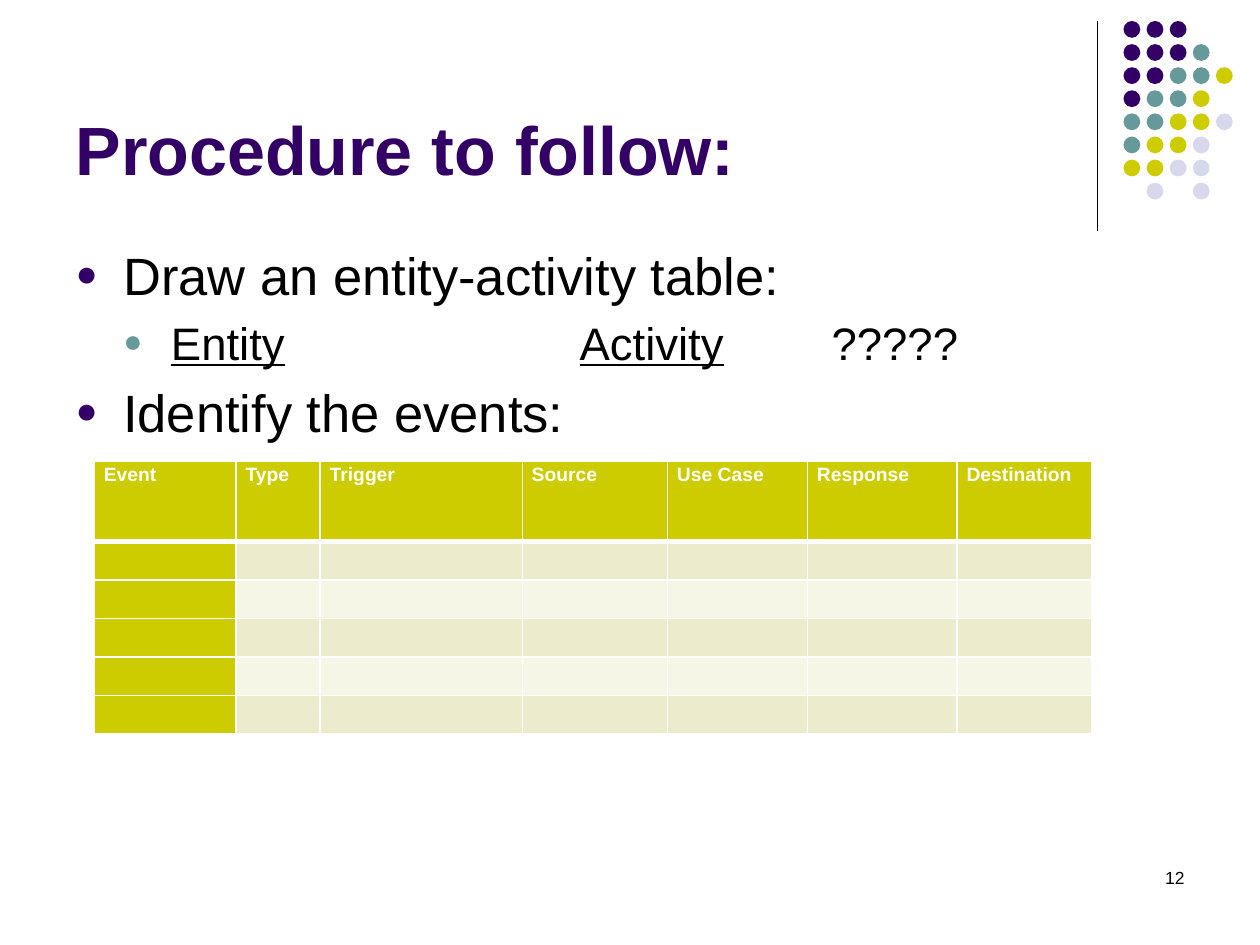
from pptx import Presentation
from pptx.dml.color import RGBColor
from pptx.enum.shapes import MSO_CONNECTOR as Link, MSO_SHAPE as Kind
from pptx.enum.text import MSO_ANCHOR as Anchor, MSO_AUTO_SIZE as Auto, PP_ALIGN as Align
from pptx.oxml.ns import qn
from pptx.util import Pt
from lxml.etree import SubElement as Sub

PLUM, TEAL, LIME, MIST = "330066", "669999", "CCCC00", "D8D8EC"
BLACK, WHITE = "000000", "FFFFFF"
BANDS = ("ECECCC", "F6F6E7")


def color(code):
    return RGBColor.from_string(code)


class Deck:
    face = "Arial"

    def __init__(self):
        self.prs = Presentation()
        self.prs.slide_width, self.prs.slide_height = Pt(720), Pt(540)
        self.slide = self.prs.slides.add_slide(self.prs.slide_layouts[1])
        self.shapes = self.slide.shapes

    def style(self, par, size, ink=BLACK, bold=False):
        font = par.font
        font.name, font.size, font.bold = self.face, Pt(size), bold
        font.color.rgb = color(ink)

    def place(self, shape, x, y, w, h):
        shape.left, shape.top, shape.width, shape.height = map(Pt, (x, y, w, h))
        frame = shape.text_frame
        frame.auto_size, frame.word_wrap = Auto.NONE, True
        return frame

    def title(self, text, *box):
        frame = self.place(self.shapes.title, *box)
        frame.text, frame.vertical_anchor = text, Anchor.BOTTOM
        par = frame.paragraphs[0]
        par.alignment = Align.LEFT
        self.style(par, 39, PLUM, True)

    def bullet(self, par, level, ink):
        props = par._p.get_or_add_pPr()
        props.set("marL", str(Pt(27.25 * (level + 1))))
        props.set("indent", str(Pt(-27.25)))
        props.set("defTabSz", str(Pt(72)))
        Sub(Sub(props, qn("a:buClr")), qn("a:srgbClr"), val=ink)
        Sub(props, qn("a:buSzPct"), val="70000")
        Sub(props, qn("a:buFont"), typeface=self.face)
        Sub(props, qn("a:buChar"), char="●")

    def body(self, items, *box):
        """Each item is a level and its runs; a run is text and underline."""
        frame = self.place(self.shapes.placeholders[1], *box)
        for i, (level, runs) in enumerate(items):
            par = frame.add_paragraph() if i else frame.paragraphs[0]
            par.level = level
            self.bullet(par, level, (PLUM, TEAL)[level])
            self.style(par, (30, 26)[level])
            for text, under in runs:
                run = par.add_run()
                run.text = text
                if under:
                    run.font.underline = True

    def note(self, text, *box):
        frame = self.place(self.shapes.add_textbox(0, 0, 0, 0), *box)
        frame.text = text
        par = frame.paragraphs[0]
        par.alignment = Align.RIGHT
        self.style(par, 10)

    def line(self, *ends):
        link = self.shapes.add_connector(Link.STRAIGHT, *map(Pt, ends))
        link.line.color.rgb, link.line.width = color(BLACK), Pt(0.75)
        Sub(link._element.spPr, qn("a:effectLst"))

    def dots(self, rows, inks, x, y, size, step):
        group = self.shapes.add_group_shape()
        for r, row in enumerate(rows):
            for c, key in enumerate(row):
                if key not in inks:
                    continue
                dot = group.shapes.add_shape(
                    Kind.OVAL, Pt(x + c * step), Pt(y + r * step), Pt(size), Pt(size))
                dot.shadow.inherit = False
                dot.fill.solid()
                dot.fill.fore_color.rgb = color(inks[key])
                dot.line.fill.background()

    def cell(self, cell, fill, edges):
        cell.margin_left = cell.margin_right = Pt(5.4)
        cell.margin_top = cell.margin_bottom = 0
        props = cell._tc.get_or_add_tcPr()
        for side, width in zip("LRTB", edges):
            edge = Sub(props, qn("a:ln" + side), w=str(Pt(width)))
            Sub(Sub(edge, qn("a:solidFill")), qn("a:srgbClr"), val=WHITE)
        cell.fill.solid()
        cell.fill.fore_color.rgb = color(fill)

    def table(self, heads, cols, rows, x, y):
        size = map(Pt, (x, y, sum(cols), sum(rows)))
        grid = self.shapes.add_table(len(rows), len(cols), *size).table
        grid.first_col = True
        for col, width in zip(grid.columns, cols):
            col.width = Pt(width)
        for r, high in enumerate(rows):
            grid.rows[r].height = Pt(high)
            edges = (1, 1, 3 if r == 1 else 1, 3 if r == 0 else 1)
            for c, head in enumerate(heads):
                cell = grid.cell(r, c)
                fill = LIME if r == 0 or c == 0 else BANDS[(r - 1) % 2]
                self.cell(cell, fill, edges)
                par = cell.text_frame.paragraphs[0]
                if r == 0:
                    par.text, par.line_spacing = head, 1.15
                self.style(par, 11, WHITE, r == 0)


def main():
    deck = Deck()

    # Corner ornament
    deck.line(627, 12, 627, 132)
    rows = ("PPP", "PPPT", "PPTTL", "PTTL", "TTLLM", "TLLM", "LLMM", " M M")
    inks = {"P": PLUM, "T": TEAL, "L": LIME, "M": MIST}
    deck.dots(rows, inks, 642, 12, 9.6, 13.2)

    # Title and list
    deck.title("Procedure to follow:", 36, 9.5, 594, 102)
    deck.body([
        (0, [("Draw an entity-activity table:", False)]),
        (1, [("Entity", True), ("\t\t\t", False),
             ("Activity", True), ("\t?????", False)]),
        (0, [("Identify the events:", False)]),
    ], 36, 135, 648, 347)

    # Page number
    deck.note("12", 594, 492, 90, 36)

    # Event table
    heads = ("Event", "Type", "Trigger", "Source", "Use Case", "Response",
             "Destination")
    cols = (81, 48, 115.5, 83, 80, 85.5, 77)
    deck.table(heads, cols, [46] + [22] * 5, 54, 263.5)

    deck.prs.save("out.pptx")


if __name__ == "__main__":
    main()
